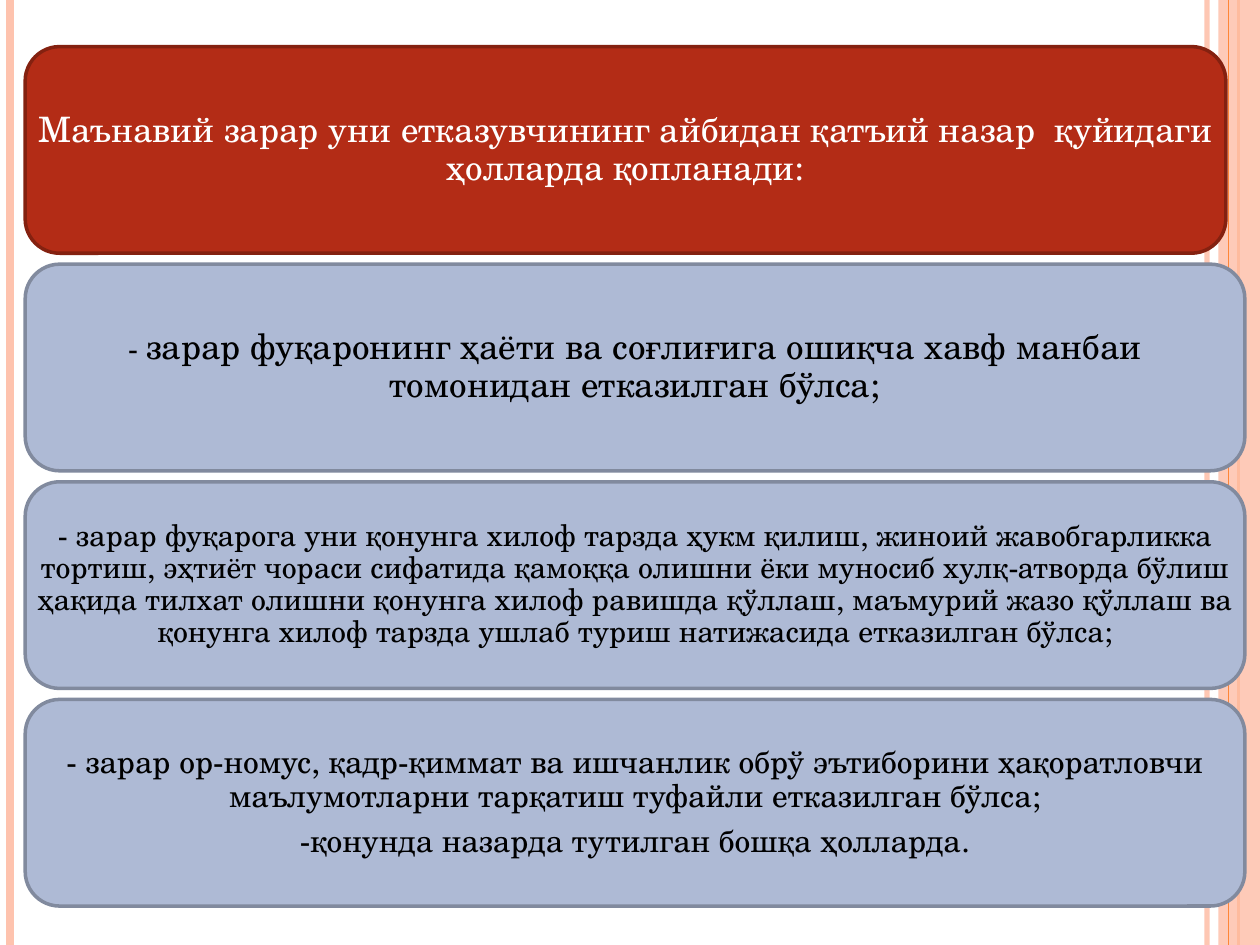
from pptx import Presentation
from pptx.dml.color import RGBColor
from pptx.enum.shapes import MSO_CONNECTOR as Conn, MSO_SHAPE as Shape
from pptx.enum.text import MSO_ANCHOR as Anchor, PP_ALIGN as Align
from pptx.oxml.ns import qn
from pptx.util import Inches, Pt
from lxml.etree import SubElement

PEACH, ORANGE = "FEC3AE", "FE8637"
HIGH, WIDE = 7.5, 10


def paint(fill, tone, alpha=100):
    fill.solid()
    fill.fore_color.rgb = RGBColor.from_string(tone)
    return alpha


def fade(part, alpha):
    """Set the opacity, in percent, of the first colour under an XML part."""
    tone = next(part.iter(qn("a:srgbClr")))
    SubElement(tone, qn("a:alpha"), val=str(alpha * 1000))


class Deck:
    font = "TeX Gyre Schola"

    def __init__(self, slide):
        self.shapes = slide.shapes

    def rule(self, x, tone, width, alpha=100):
        """A line over the full height of the slide."""
        line = self.shapes.add_connector(
            Conn.STRAIGHT, Inches(x), 0, Inches(x), Inches(HIGH))
        line.line.width = Pt(width)
        paint(line.line.fill, tone)
        props = line._element.spPr
        SubElement(props, qn("a:effectLst"))
        if alpha < 100:
            fade(props, alpha)

    def block(self, kind, x, y, w, h, tone, edge=None):
        box = self.shapes.add_shape(
            kind, Inches(x), Inches(y), Inches(w), Inches(h))
        box.shadow.inherit = False
        paint(box.fill, tone)
        if edge:
            paint(box.line.fill, edge)
            box.line.width = Pt(2)
        else:
            box.line.fill.background()
        return box

    def band(self, x, w, tone, alpha):
        box = self.block(Shape.RECTANGLE, x, 0, w, HIGH, tone)
        fade(box._element.spPr, alpha)

    def card(self, x, y, w, h, tone, edge, ink, paras):
        """A rounded box; each paragraph is a list of (text, size) runs."""
        box = self.block(Shape.ROUNDED_RECTANGLE, x, y, w, h, tone, edge)
        frame = box.text_frame
        # The rounded corners already inset the text
        look = {"margin_left": 0, "margin_right": 0, "margin_top": 0,
                "margin_bottom": 0, "word_wrap": True,
                "vertical_anchor": Anchor.MIDDLE}
        for key, value in look.items():
            setattr(frame, key, value)
        for i, runs in enumerate(paras):
            para = frame.add_paragraph() if i else frame.paragraphs[0]
            style = {"alignment": Align.CENTER, "line_spacing": 0.9,
                     "space_after": Pt(0.35 * runs[-1][1])}
            for key, value in style.items():
                setattr(para, key, value)
            for text, size in runs:
                run = para.add_run()
                run.text = text
                run.font.name, run.font.size = self.font, Pt(size)
                paint(run.font.fill, ink)


def main():
    prs = Presentation()
    prs.slide_width, prs.slide_height = Inches(WIDE), Inches(HIGH)
    deck = Deck(prs.slides.add_slide(prs.slide_layouts[6]))

    # Side stripes
    deck.rule(9.58, PEACH, 3, 93)
    deck.rule(0.08, PEACH, 4.5)
    deck.rule(9.83, ORANGE, 1.5)
    deck.band(9.67, 0.33, PEACH, 87)
    deck.rule(9.75, ORANGE, 0.75)

    # Stacked cards: a red heading and three blue cases
    red = (9.53, "B32C16", "842110", "FFFFFF")
    blue = (9.68, "AEBAD5", "818A9E", "000000")
    cards = [
        (red, [[("Маънавий зарар уни етказувчининг айбидан қатъий назар  "
                 "қуйидаги ҳолларда қопланади:", 20)]]),
        (blue, [[("- ", 17),
                 ("зарар фуқаронинг ҳаёти ва соғлиғига ошиқча хавф манбаи "
                  "томонидан етказилган бўлса;", 20)]]),
        (blue, [[("- зарар фуқарога уни қонунга хилоф тарзда ҳукм қилиш, "
                  "жиноий жавобгарликка тортиш, эҳтиёт чораси сифатида "
                  "қамоққа олишни ёки муносиб хулқ-атворда бўлиш ҳақида "
                  "тилхат олишни қонунга хилоф равишда қўллаш, маъмурий "
                  "жазо қўллаш ва қонунга хилоф тарзда ушлаб туриш "
                  "натижасида етказилган бўлса;", 17)]]),
        (blue, [[("- зарар ор-номус, қадр-қиммат ва ишчанлик обрў "
                  "эътиборини ҳақоратловчи маълумотларни тарқатиш туфайли "
                  "етказилган бўлса;", 18)],
                [("-қонунда назарда тутилган бошқа ҳолларда.", 18)]]),
    ]
    left, top, tall, step = 0.2, 0.37, 1.64, 1.727
    for i, ((w, tone, edge, ink), paras) in enumerate(cards):
        deck.card(left, top + i * step, w, tall, tone, edge, ink, paras)

    prs.save("out.pptx")


if __name__ == "__main__":
    main()
